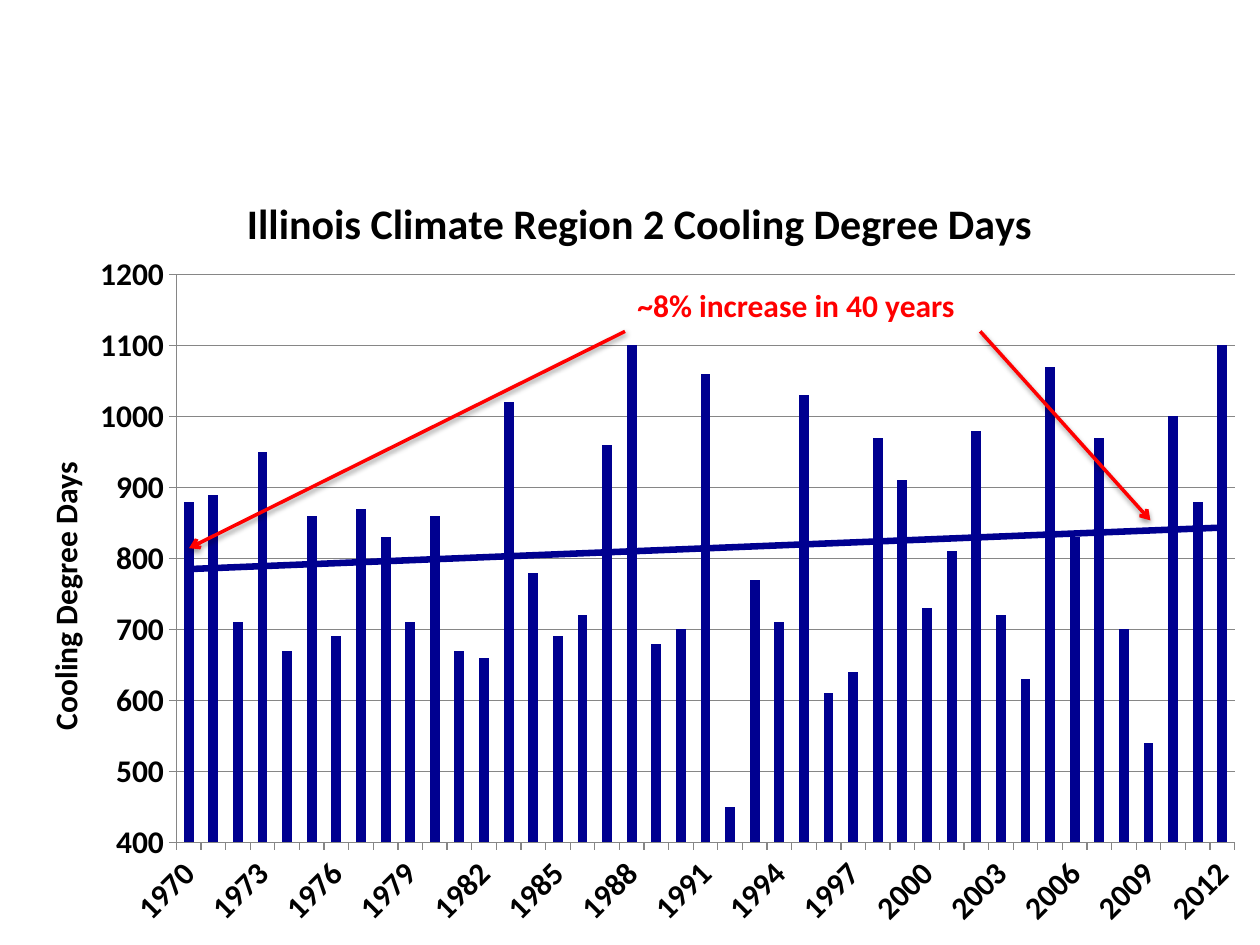
"""Build the cooling degree days slide: column chart, trend line and callout."""
from pptx import Presentation
from pptx.chart.data import CategoryChartData
from pptx.dml.color import RGBColor
from pptx.enum.chart import XL_CHART_TYPE, XL_TICK_MARK
from pptx.enum.shapes import MSO_CONNECTOR
from pptx.oxml import parse_xml
from pptx.oxml.ns import nsdecls
from pptx.util import Cm, Pt

COLUMNS = XL_CHART_TYPE.COLUMN_CLUSTERED
OUTSIDE = XL_TICK_MARK.OUTSIDE
STRAIGHT = MSO_CONNECTOR.STRAIGHT

TITLE = "Illinois Climate Region 2 Cooling Degree Days"
AXIS_TITLE = "Cooling Degree Days"
CALLOUT = "~8% increase in 40 years"
FIRST_YEAR = 1970
DEGREE_DAYS = [
    880, 890, 710, 950, 670, 860, 690, 870, 830, 710, 860,
    670, 660, 1020, 780, 690, 720, 960, 1100, 680, 700, 1060,
    450, 770, 710, 1030, 610, 640, 970, 910, 730, 810, 980,
    720, 630, 1070, 830, 970, 700, 540, 1000, 880, 1100,
]
ARROWS = [((12.6, 6.68), (3.81, 11.05)), ((19.76, 6.68), (23.19, 10.49))]
COLORS = {"text": "000000", "data": "000090", "callout": "FF0000", "axis": "868686"}
FONT = {"name": "Calibri", "bold": True}
VALUE_SCALE = {"minimum_scale": 400, "maximum_scale": 1200, "major_unit": 100,
               "has_major_gridlines": True}


def rgb(key):
    return RGBColor.from_string(COLORS[key])


def set_all(obj, values):
    for name, value in values.items():
        setattr(obj, name, value)


def set_font(font, size, color="text"):
    set_all(font, {**FONT, "size": Pt(size)})
    font.color.rgb = rgb(color)


def set_line(line, color, width):
    line.color.rgb = rgb(color)
    line.width = Pt(width)


def set_layout(el, **fractions):
    for old in el.xpath("./c:layout"):
        el.remove(old)
    target = '<c:layoutTarget val="inner"/>' if "w" in fractions else ""
    modes = "".join(f'<c:{k}Mode val="edge"/>' for k in "xy")
    values = "".join(f'<c:{k} val="{v}"/>' for k, v in fractions.items())
    layout = parse_xml(f'<c:layout {nsdecls("c")}><c:manualLayout>{target}{modes}'
                       f'{values}</c:manualLayout></c:layout>')
    el.insert(len(el.xpath("./c:tx")), layout)


def set_title(owner, text, size):
    owner.has_title = True
    tf = owner.chart_title.text_frame if hasattr(owner, "chart_title") else owner.axis_title.text_frame
    r = tf.paragraphs[0].add_run()
    r.text = text
    set_font(r.font, size)


def add_chart(s):
    data = CategoryChartData()
    data.categories = [str(FIRST_YEAR + i) for i in range(len(DEGREE_DAYS))]
    data.add_series(AXIS_TITLE, DEGREE_DAYS)
    chart = s.shapes.add_chart(COLUMNS, Cm(0), Cm(3.15), Cm(25.4), Cm(15.9), data).chart
    chart.has_legend = False
    set_font(chart.font, 10)
    set_title(chart, TITLE, 24)
    set_title(chart.value_axis, AXIS_TITLE, 18)
    set_all(chart.value_axis, VALUE_SCALE)
    set_line(chart.value_axis.major_gridlines.format.line, "axis", 0.75)
    for axis in (chart.category_axis, chart.value_axis):
        axis.major_tick_mark = OUTSIDE
        set_font(axis.tick_labels.font, 18)
        set_line(axis.format.line, "axis", 0.75)
    plot = chart.plots[0]
    set_all(plot, {"gap_width": 150, "vary_by_categories": False})
    fill = plot.series[0].format.fill
    fill.solid()
    fill.fore_color.rgb = rgb("data")

    def find(query):
        return chart.element.xpath(query)[0]

    set_layout(find(".//c:plotArea"), x=0.14, y=0.15, w=0.84, h=0.72)
    set_layout(find("./c:chart/c:title"), x=0.19, y=0.04)
    set_layout(find(".//c:valAx/c:title"), x=0.03, y=0.38)
    find(".//c:catAx/c:txPr/a:bodyPr").set("rot", "-2700000")
    find(".//c:valAx/c:title//a:bodyPr").set("rot", "-5400000")
    find(".//c:catAx/c:noMultiLvlLbl").addprevious(
        parse_xml(f'<c:tickLblSkip {nsdecls("c")} val="3"/>'))
    find(".//c:ser/c:cat").addprevious(parse_xml(
        f'<c:trendline {nsdecls("c", "a")}><c:spPr><a:ln w="{Pt(3.75)}"><a:solidFill>'
        f'<a:srgbClr val="{COLORS["data"]}"/></a:solidFill></a:ln></c:spPr>'
        '<c:trendlineType val="linear"/><c:dispRSqr val="0"/><c:dispEq val="0"/></c:trendline>'))


def add_callout(s):
    tf = s.shapes.add_textbox(Cm(12.6), Cm(5.64), Cm(10.21), Cm(1.02)).text_frame
    tf.word_wrap = True
    r = tf.paragraphs[0].add_run()
    r.text = CALLOUT
    set_font(r.font, 18, "callout")


def add_arrow(s, start, end):
    sp = s.shapes.add_connector(STRAIGHT, *map(Cm, start + end))
    set_line(sp.line, "callout", 2)
    ln = sp.element.xpath("./p:spPr/a:ln")[0]
    ln.append(parse_xml(f'<a:tailEnd {nsdecls("a")} type="arrow"/>'))
    ln.addnext(parse_xml(
        f'<a:effectLst {nsdecls("a")}><a:outerShdw blurRad="{Pt(3.1)}" dist="{Pt(1.6)}" '
        f'dir="5400000" rotWithShape="0"><a:srgbClr val="{COLORS["text"]}">'
        '<a:alpha val="38000"/></a:srgbClr></a:outerShdw></a:effectLst>'))


def main():
    prs = Presentation()
    set_all(prs, {"slide_width": Cm(25.4), "slide_height": Cm(19.05)})
    s = prs.slides.add_slide(prs.slide_layouts[6])
    add_chart(s)
    add_callout(s)
    for start, end in ARROWS:
        add_arrow(s, start, end)
    prs.save("out.pptx")


if __name__ == "__main__":
    main()
